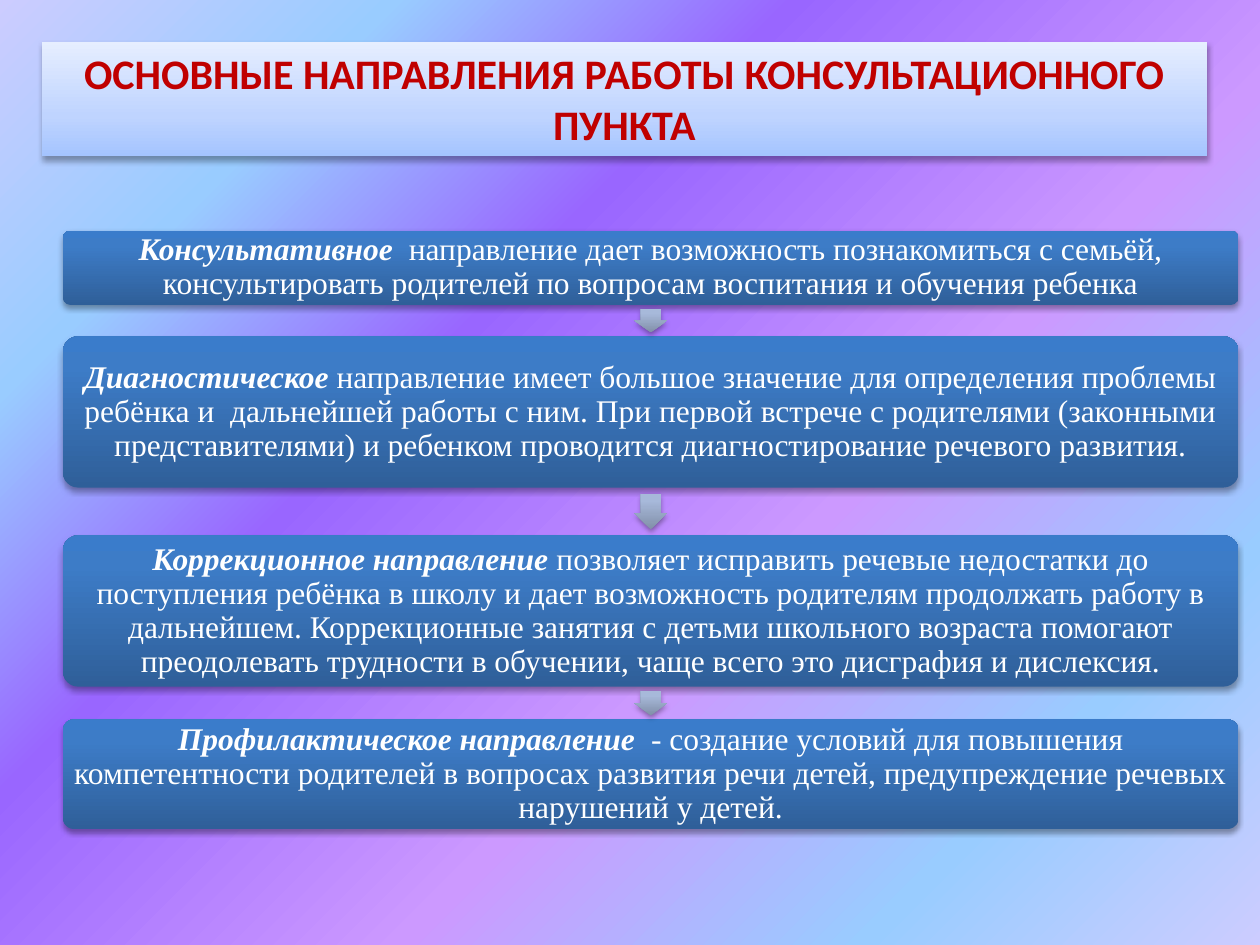
from itertools import pairwise
from lxml import etree
from pptx import Presentation
from pptx import util as u
from pptx.dml import color
from pptx.enum import shapes, text
from pptx.oxml import ns

WIDE, HIGH = 10, 7.5
LEFT, SPAN = 0.05 * WIDE, 0.933 * WIDE
HUES = {
    "page": [(0, "CCCCFF"), (18, "99CCFF"), (36, "9966FF"),
             (61, "CC99FF"), (82, "99CCFF"), (100, "CCCCFF")],
    "title": [(0, "A4C4FF"), (35, "BFD4FF"), (100, "E6EEFF")],
    "card": [(0, "2F5F99"), (80, "3D7CC7"), (100, "3A7CCB")],
    "arrow": [(0, "818FA8"), (80, "A7B9DA"), (100, "A7BADC")],
    "red": "C00000",
    "white": "FFFFFF",
}
CARDS = [
    (1.83, 0.59, "Консультативное  ",
     "направление дает возможность познакомиться с семьёй, консультировать "
     "родителей по вопросам воспитания и обучения ребенка"),
    (2.67, 1.2, "Диагностическое ",
     "направление имеет большое значение для определения проблемы ребёнка и  "
     "дальнейшей работы с ним. При первой встрече с родителями (законными "
     "представителями) и ребенком проводится диагностирование речевого развития."),
    (4.25, 1.2, "Коррекционное направление ",
     "позволяет исправить речевые недостатки до поступления ребёнка в школу и "
     "дает возможность родителям продолжать работу в дальнейшем. Коррекционные "
     "занятия с детьми школьного возраста помогают преодолевать трудности в "
     "обучении, чаще всего это дисграфия и дислексия."),
    (5.71, 0.87, "Профилактическое направление  ",
     "- создание условий для повышения компетентности родителей в вопросах "
     "развития речи детей, предупреждение речевых нарушений у детей."),
]


def add(node, tag, **attrs):
    return etree.SubElement(node, ns.qn(tag), {k: str(v) for k, v in attrs.items()})


def shade(node, fill, hue, angle):
    fill.gradient()
    fill.gradient_angle = 360 - angle
    stops = node.find(".//" + ns.qn("a:gsLst"))
    stops.getparent().set("rotWithShape", "0")
    for stop in list(stops):
        stops.remove(stop)
    for place, tone in HUES[hue]:
        add(add(stops, "a:gs", pos=place * 1000), "a:srgbClr", val=tone)


def cast(shape, alpha, blur, dist):
    shape.shadow.inherit = False
    effects = shape.element.find(".//" + ns.qn("a:effectLst"))
    outer = add(effects, "a:outerShdw", blurRad=u.Pt(blur), dist=u.Pt(dist),
                dir=90 * 60000, rotWithShape=0)
    add(add(outer, "a:srgbClr", val="000000"), "a:alpha", val=alpha * 1000)


def block(slide, kind, box, hue, glow=(35, 3.1, 1.8)):
    shape = slide.shapes.add_shape(kind, *map(u.Inches, box))
    shade(shape.element, shape.fill, hue, 270)
    shape.line.fill.background()
    cast(shape, *glow)
    return shape


def style(run, face, size, hue, bold, slant=False):
    font = run.font
    font.name, font.size, font.bold, font.italic = face, u.Pt(size), bold, slant
    font.color.rgb = color.RGBColor.from_string(HUES[hue])


def title(slide, words):
    shape = block(slide, shapes.MSO_SHAPE.RECTANGLE,
                  (0.33, 0.33, 9.25, 0.91), "title", (32, 3.5, 2.2))
    frame = shape.text_frame
    frame.text = words
    frame.word_wrap = True
    frame.auto_size = text.MSO_AUTO_SIZE.SHAPE_TO_FIT_TEXT
    frame.vertical_anchor = text.MSO_ANCHOR.TOP
    line = frame.paragraphs[0]
    line.alignment = text.PP_ALIGN.CENTER
    style(line.runs[0], "Calibri", 24, "red", True)


def card(slide, top, tall, lead, rest):
    shape = block(slide, shapes.MSO_SHAPE.ROUNDED_RECTANGLE,
                  (LEFT, top, SPAN, tall), "card")
    shape.adjustments[0] = 0.1
    frame = shape.text_frame
    frame.word_wrap = True
    frame.vertical_anchor = text.MSO_ANCHOR.MIDDLE
    frame.margin_left = frame.margin_right = u.Inches(0.04)
    frame.margin_top = frame.margin_bottom = u.Inches(0.04)
    line = frame.paragraphs[0]
    line.alignment = text.PP_ALIGN.CENTER
    line.line_spacing = 0.9
    for words, strong in ((lead, True), (rest, False)):
        run = line.add_run()
        run.text = words
        style(run, "Times New Roman", 18, "white", strong, strong)


def arrow(slide, start, end):
    long, thick = 0.75 * (end - start), 0.26
    box = (LEFT + (SPAN - long) / 2, (start + end - thick) / 2, long, thick)
    shape = block(slide, shapes.MSO_SHAPE.RIGHT_ARROW, box, "arrow")
    shape.rotation = 90
    shape.adjustments[0], shape.adjustments[1] = 0.6, 0.5


def main():
    deck = Presentation()
    deck.slide_width, deck.slide_height = u.Inches(WIDE), u.Inches(HIGH)
    slide = deck.slides.add_slide(deck.slide_layouts[6])
    shade(slide.element, slide.background.fill, "page", 45)
    title(slide, "ОСНОВНЫЕ НАПРАВЛЕНИЯ РАБОТЫ КОНСУЛЬТАЦИОННОГО ПУНКТА")
    for item in CARDS:
        card(slide, *item)
    for above, below in pairwise(CARDS):
        arrow(slide, above[0] + above[1], below[0])
    deck.save("out.pptx")


if __name__ == "__main__":
    main()
